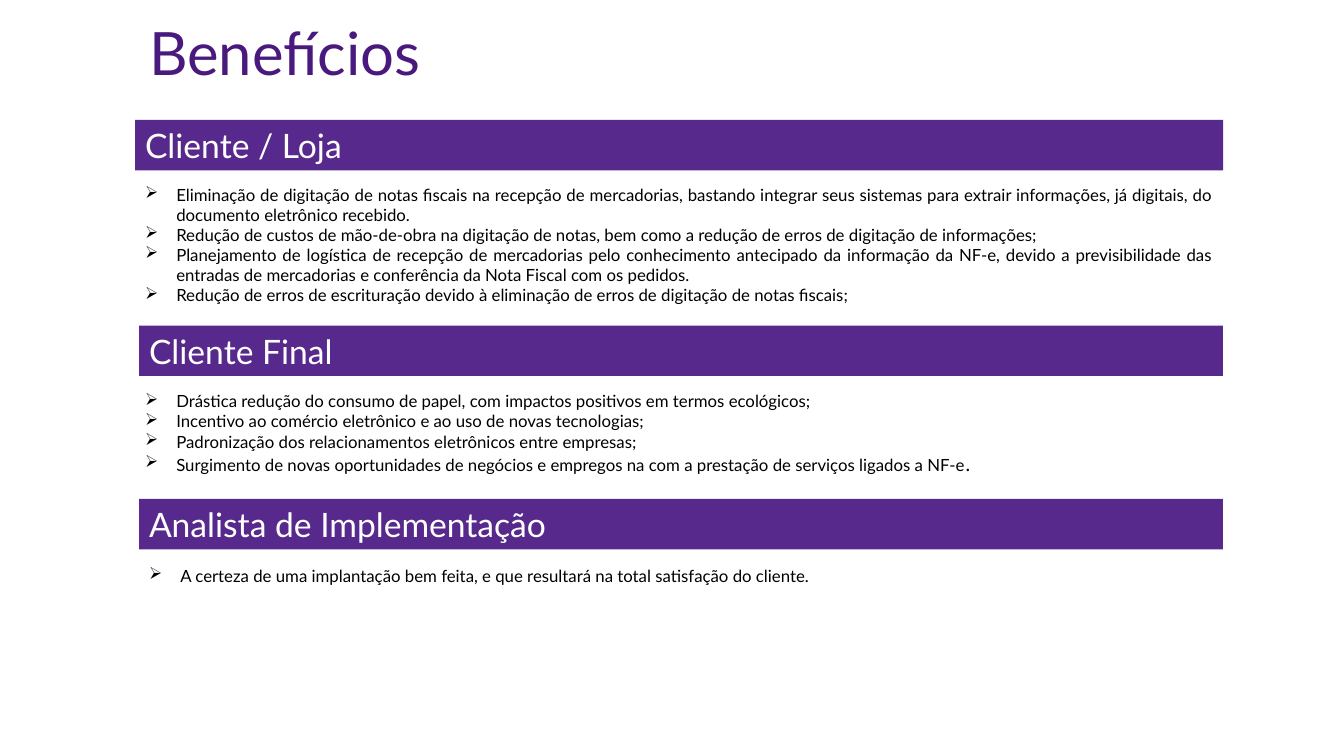
from dataclasses import dataclass

from lxml.etree import SubElement
from pptx import Presentation
from pptx.dml.color import RGBColor
from pptx.enum.shapes import MSO_SHAPE
from pptx.enum.text import MSO_ANCHOR, MSO_AUTO_SIZE, PP_ALIGN
from pptx.oxml.ns import qn
from pptx.util import Inches, Pt


@dataclass(frozen=True)
class Theme:
    font: str = "Lato"
    title_color: str = "49197D"
    bar_color: str = "58298C"
    bar_text: str = "FFFFFF"
    body_text: str = "000000"
    title_size: float = 42.7
    bar_size: float = 24
    body_size: float = 12
    last_stop_size: float = 14
    bullet: str = "➢"
    hanging: float = 0.31


class BenefitsSlide:
    def __init__(self, presentation, theme):
        self.theme = theme
        self.slide = presentation.slides.add_slide(presentation.slide_layouts[6])

    def apply(self, target, formats):
        for name, value in formats.items():
            setattr(target, name, value)

    def add_words(self, paragraph, words, size, color):
        run = paragraph.add_run()
        run.text = words
        self.apply(run.font, {"name": self.theme.font, "size": Pt(size)})
        run.font.color.rgb = RGBColor.from_string(color)

    def frame(self, shape, auto_size):
        self.apply(shape.text_frame, {
            "word_wrap": True,
            "auto_size": auto_size,
            "vertical_anchor": MSO_ANCHOR.TOP,
        })
        return shape.text_frame

    def text_box(self, left, top, width, height, auto_size):
        box = self.slide.shapes.add_textbox(
            Inches(left), Inches(top), Inches(width), Inches(height))
        return self.frame(box, auto_size)

    def title(self, words, left, top, width, height):
        heading = self.text_box(left, top, width, height, MSO_AUTO_SIZE.NONE)
        self.add_words(heading.paragraphs[0], words,
                       self.theme.title_size, self.theme.title_color)

    def bar(self, words, left, top, width, height=0.5):
        band = self.slide.shapes.add_shape(
            MSO_SHAPE.RECTANGLE, Inches(left), Inches(top), Inches(width), Inches(height))
        band.shadow.inherit = False
        band.fill.solid()
        band.fill.fore_color.rgb = RGBColor.from_string(self.theme.bar_color)
        band.line.fill.background()
        label = self.frame(band, MSO_AUTO_SIZE.SHAPE_TO_FIT_TEXT).paragraphs[0]
        label.alignment = PP_ALIGN.LEFT
        self.add_words(label, words, self.theme.bar_size, self.theme.bar_text)

    def bullets(self, items, left, top, width, height):
        benefits = self.text_box(left, top, width, height, MSO_AUTO_SIZE.SHAPE_TO_FIT_TEXT)
        hanging = Inches(self.theme.hanging)
        for index, runs in enumerate(items):
            benefit = benefits.add_paragraph() if index else benefits.paragraphs[0]
            benefit.alignment = PP_ALIGN.JUSTIFY
            properties = benefit._p.get_or_add_pPr()
            properties.set("marL", str(hanging))
            properties.set("indent", str(-hanging))
            SubElement(properties, qn("a:buChar"), char=self.theme.bullet)
            for words, size in runs:
                self.add_words(benefit, words, size, self.theme.body_text)


def main():
    theme = Theme()
    presentation = Presentation()
    presentation.slide_width = Inches(13.33)
    presentation.slide_height = Inches(7.5)
    page = BenefitsSlide(presentation, theme)

    def plain(*sentences):
        return [[(sentence, theme.body_size)] for sentence in sentences]

    # Title
    page.title("Benefícios", 1.38, 0.11, 11.3, 0.95)

    # Store
    page.bar("Cliente / Loja", 1.34, 1.19, 10.79)
    page.bullets(plain(
        "Eliminação de digitação de notas fiscais na recepção de mercadorias, bastando "
        "integrar seus sistemas para extrair informações, já digitais, do documento "
        "eletrônico recebido.",
        "Redução de custos de mão-de-obra na digitação de notas, bem como a redução de "
        "erros de digitação de informações;",
        "Planejamento de logística de recepção de mercadorias pelo conhecimento antecipado "
        "da informação da NF-e, devido a previsibilidade das entradas de mercadorias e "
        "conferência da Nota Fiscal com os pedidos.",
        "Redução de erros de escrituração devido à eliminação de erros de digitação de "
        "notas fiscais;",
    ), 1.34, 1.78, 10.79, 1.31)

    # End customer, closed by a larger full stop
    page.bar("Cliente Final", 1.38, 3.23, 10.75)
    customer_benefits = plain(
        "Drástica redução do consumo de papel, com impactos positivos em termos ecológicos;",
        "Incentivo ao comércio eletrônico e ao uso de novas tecnologias;",
        "Padronização dos relacionamentos eletrônicos entre empresas;",
        "Surgimento de novas oportunidades de negócios e empregos na com a prestação de "
        "serviços ligados a NF-e",
    )
    customer_benefits[-1].append((".", theme.last_stop_size))
    page.bullets(customer_benefits, 1.34, 3.83, 10.75, 0.94)

    # Implementation analyst
    page.bar("Analista de Implementação", 1.38, 4.95, 10.75)
    page.bullets(plain(
        "A certeza de uma implantação bem feita, e que resultará na total satisfação "
        "do cliente.",
    ), 1.38, 5.56, 10.75, 0.3)

    presentation.save("out.pptx")


if __name__ == "__main__":
    main()
